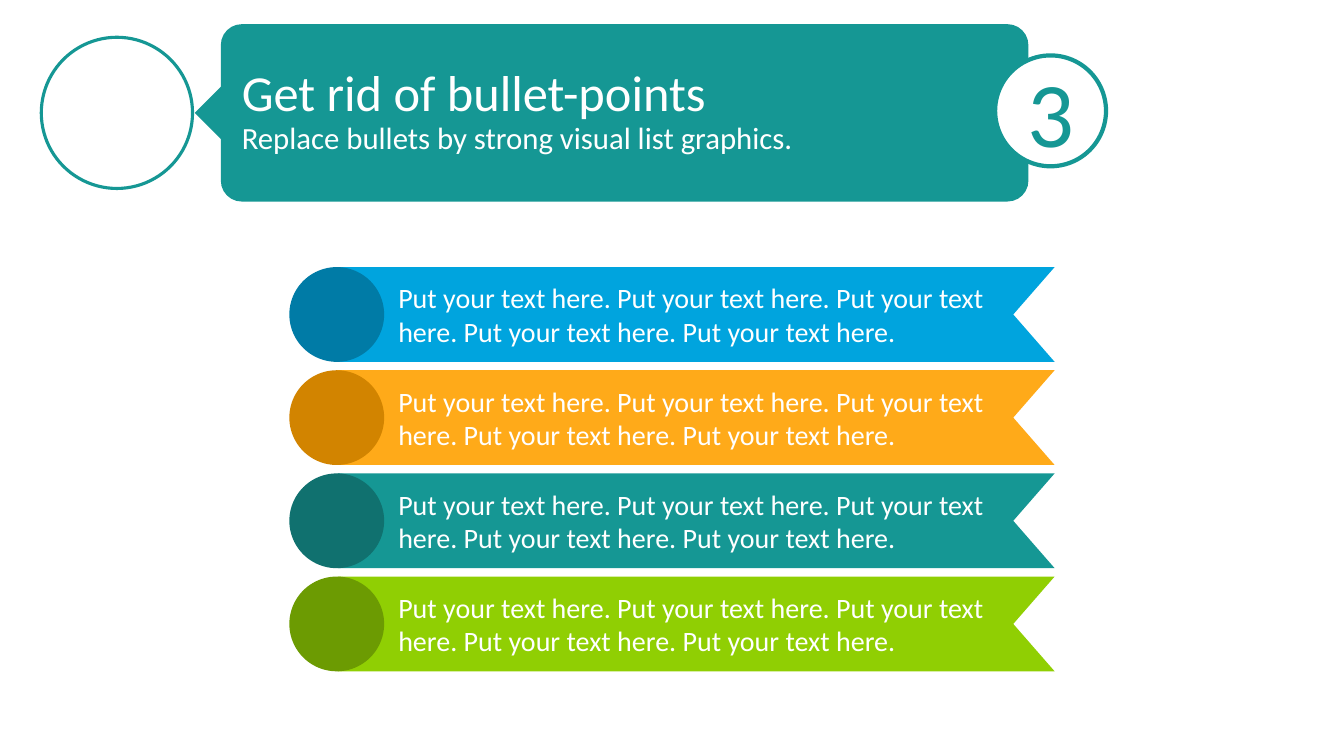
import pptx
import pptx.util
import pptx.dml.color
import pptx.enum.shapes
import pptx.enum.text

Inches = pptx.util.Inches
MSO_SHAPE = pptx.enum.shapes.MSO_SHAPE
PP_ALIGN = pptx.enum.text.PP_ALIGN

theme = {
    "font": "Calibri",
    "white": "FFFFFF",
    "teal": "159794",
    "banners": [
        ("00A4DE", "007BA6"),
        ("FFAA19", "D28400"),
        ("159794", "10716F"),
        ("90CF03", "6C9B02"),
    ],
    "title_size": 36,
    "subtitle_size": 22,
    "number_size": 66,
    "banner_size": 20,
}


def paint(shape, fill, line=None, width=0):
    shape.shadow.inherit = False
    shape.fill.solid()
    shape.fill.fore_color.rgb = pptx.dml.color.RGBColor.from_string(fill)
    if line:
        shape.line.color.rgb = pptx.dml.color.RGBColor.from_string(line)
        shape.line.width = pptx.util.Pt(width)
    else:
        shape.line.fill.background()


def write(shape, pieces, color, alignment, frame_format):
    frame = shape.text_frame
    frame_values = {
        "word_wrap": True,
        "vertical_anchor": pptx.enum.text.MSO_ANCHOR.MIDDLE,
        **frame_format,
    }
    for name, value in frame_values.items():
        setattr(frame, name, value)
    paragraph = frame.paragraphs[0]
    paragraph.alignment = alignment
    for index, (text, size) in enumerate(pieces):
        if index:
            paragraph.add_line_break()
        run = paragraph.add_run()
        run.text = text
        run.font.color.rgb = pptx.dml.color.RGBColor.from_string(color)
        font_values = {"name": theme["font"], "size": pptx.util.Pt(size)}
        for name, value in font_values.items():
            setattr(run.font, name, value)
    return paragraph


presentation = pptx.Presentation()
presentation.slide_width = Inches(13.33)
presentation.slide_height = Inches(7.5)
slide = presentation.slides.add_slide(presentation.slide_layouts[6])
shapes = slide.shapes

header = shapes.add_shape(
    MSO_SHAPE.ROUNDED_RECTANGLE, Inches(2.19), Inches(0.24), Inches(8.01), Inches(1.76))
header.adjustments[0] = 0.118
paint(header, theme["teal"])

pointer = shapes.add_shape(
    MSO_SHAPE.RIGHT_TRIANGLE, Inches(2.01), Inches(0.93), Inches(0.38), Inches(0.38))
pointer.rotation = 45
paint(pointer, theme["teal"])

icon_circle = shapes.add_shape(
    MSO_SHAPE.OVAL, Inches(0.41), Inches(0.37), Inches(1.5), Inches(1.5))
paint(icon_circle, theme["white"], theme["teal"], 2.25)

title = shapes.add_textbox(Inches(2.3), Inches(0.25), Inches(7.68), Inches(1.72))
title_pieces = [
    ("Get rid of bullet-points", theme["title_size"]),
    ("Replace bullets by strong visual list graphics.", theme["subtitle_size"]),
]
title_paragraph = write(title, title_pieces, theme["white"], PP_ALIGN.LEFT, {})
title_paragraph.line_spacing = 0.9

number_circle = shapes.add_shape(
    MSO_SHAPE.OVAL, Inches(9.87), Inches(0.55), Inches(1.1), Inches(1.1))
paint(number_circle, theme["white"], theme["teal"], 3)
write(number_circle, [("3", theme["number_size"])], theme["teal"], PP_ALIGN.CENTER, {})

banner_left, banner_right, notch = Inches(3.35), Inches(10.46), Inches(10.05)
first_top, last_top, banner_height = Inches(2.65), Inches(5.72), Inches(0.94)
banner_pitch = (last_top - first_top) // (len(theme["banners"]) - 1)
banner_text = " ".join(["Put your text here."] * 5)
banner_format = {
    "margin_left": Inches(0.6),
    "margin_right": Inches(0.31),
    "margin_top": Inches(0.16),
    "margin_bottom": Inches(0.16),
}

for row, (banner_color, circle_color) in enumerate(theme["banners"]):
    top = first_top + row * banner_pitch
    bottom = top + banner_height
    outline = shapes.build_freeform(banner_left, top)
    outline.add_line_segments([
        (banner_left, bottom),
        (banner_right, bottom),
        (notch, top + banner_height // 2),
        (banner_right, top),
    ])
    banner = outline.convert_to_shape()
    paint(banner, banner_color)
    write(banner, [(banner_text, theme["banner_size"])], theme["white"],
          PP_ALIGN.LEFT, banner_format)

    circle = shapes.add_shape(
        MSO_SHAPE.OVAL, Inches(2.87), top, banner_height, banner_height)
    paint(circle, circle_color)

presentation.save("out.pptx")
